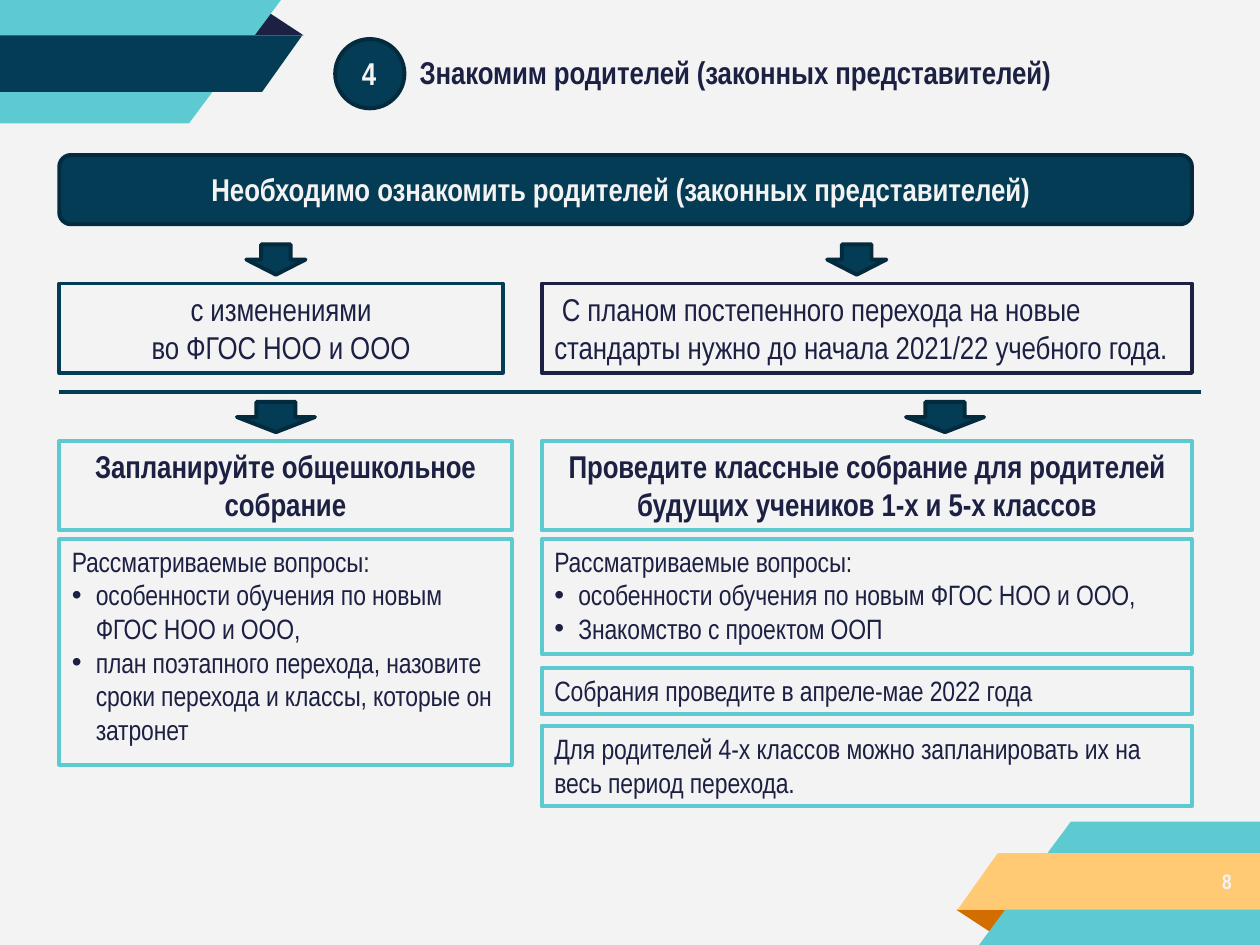
from lxml.etree import SubElement
from pptx import Presentation
from pptx.dml.color import RGBColor
from pptx.enum.shapes import MSO_CONNECTOR, MSO_SHAPE as SHAPE
from pptx.enum.text import MSO_ANCHOR as ANCHOR, MSO_AUTO_SIZE, PP_ALIGN as ALIGN
from pptx.oxml.ns import qn
from pptx.util import Inches, Pt

PAPER = RGBColor(0xF3, 0xF3, 0xF3)
INK = RGBColor(0x1C, 0x20, 0x43)
NAVY = RGBColor(0x04, 0x3C, 0x56)
EDGE = RGBColor(0x03, 0x2A, 0x3D)
TEAL = RGBColor(0x5D, 0xC9, 0xD1)
AMBER = RGBColor(0xFF, 0xCA, 0x73)
RUST = RGBColor(0xD2, 0x6E, 0x00)

W, H = 10, 7.5
LEFT, RIGHT = (0.47, 3.59), (4.3, 5.16)  # x and width of each column
FULL = RIGHT[0] + RIGHT[1] - LEFT[0]
PAD = 0.1
BULLET = 0.19

HEAD = dict(size=Pt(18), bold=True)
LEAD = dict(size=Pt(18), bold=False)
BODY = dict(size=Pt(16), bold=False)


def paint(sp, fill, line=None):
    sp.fill.solid()
    sp.fill.fore_color.rgb = fill
    if line is None:
        sp.line.fill.background()
    else:
        sp.line.color.rgb = line
        sp.line.width = Pt(2.25)


def set_bullet(p, on, first=0):
    pPr = p._p.get_or_add_pPr()
    indent = -BULLET if on else first
    pPr.set("marL", str(Inches(PAD + BULLET if on else PAD)))
    pPr.set("indent", str(Inches(indent)))
    if on:
        SubElement(pPr, qn("a:buFont"), typeface="Arial")
        SubElement(pPr, qn("a:buChar"), char="•")
    else:
        SubElement(pPr, qn("a:buNone"))


def write(sp, lines, font, color=INK, align=ALIGN.LEFT, anchor=ANCHOR.TOP,
          before=3.2, margins=(0, 0.05, 0, 0), bullets=False, first=None):
    """Fill a shape with paragraphs; with bullets, all but the first get one."""
    tf = sp.text_frame
    left, top, right, bottom = map(Inches, margins)
    frame = dict(word_wrap=True, auto_size=MSO_AUTO_SIZE.NONE, vertical_anchor=anchor,
                 margin_left=left, margin_top=top, margin_right=right, margin_bottom=bottom)
    for name, value in frame.items():
        setattr(tf, name, value)
    for i, line in enumerate(lines):
        p = tf.add_paragraph() if i else tf.paragraphs[0]
        p.text = line
        p.alignment = align
        p.space_before = Pt(0 if i else before)
        if first is not None:
            set_bullet(p, bullets and i > 0, 0 if i else first)
        for r in p.runs:
            for name, value in dict(font, name="Arial Narrow").items():
                setattr(r.font, name, value)
            r.font.color.rgb = color
            r._r.get_or_add_rPr().set("spc", "-5")


def place(sp, x, y, w, h):
    for name, value in dict(left=x, top=y, width=w, height=h).items():
        setattr(sp, name, Inches(value))


def add_block(slide, kind, x, y, w, h, fill, line):
    sp = slide.shapes.add_shape(kind, *map(Inches, (x, y, w, h)))
    sp.shadow.inherit = False
    paint(sp, fill, line)
    return sp


def add_card(slide, col, y, h, line, lines, font, **text):
    sp = add_block(slide, SHAPE.RECTANGLE, col[0], y, col[1], h, PAPER, line)
    write(sp, lines, font, **text)


def add_arrow(slide, center, y, w):
    add_block(slide, SHAPE.DOWN_ARROW, center - w / 2, y, w, 0.24, NAVY, EDGE)


def add_ribbon(slide, band, fold, turned=False):
    """Corner ribbon; turned puts it in the opposite corner."""
    parts = [
        (fold, [(2.12, 0.09), (1.98, 0.28), (2.41, 0.28)]),
        (TEAL, [(0, 0), (2.23, 0), (1.5, 0.98), (0, 0.98)]),
        (band, [(0, 0.28), (2.4, 0.28), (2.08, 0.73), (0, 0.73)]),
    ]
    for color, points in parts:
        if turned:
            points = [(W - x, H - y) for x, y in points]
        points = [(Inches(x), Inches(y)) for x, y in points]
        fb = slide.shapes.build_freeform(*points[0])
        fb.add_line_segments(points[1:])
        sp = fb.convert_to_shape()
        sp.shadow.inherit = False
        paint(sp, color)


def add_rule(slide, x1, x2, y):
    line = slide.shapes.add_connector(MSO_CONNECTOR.STRAIGHT, *map(Inches, (x1, y, x2, y)))
    line.line.color.rgb = NAVY
    line.line.width = Pt(2.25)
    SubElement(line._element.spPr, qn("a:effectLst"))


def main():
    prs = Presentation()
    prs.slide_width, prs.slide_height = Inches(W), Inches(H)
    slide = prs.slides.add_slide(prs.slide_layouts[3])
    slide.background.fill.solid()
    slide.background.fill.fore_color.rgb = PAPER
    title, left_list, right_list = slide.placeholders

    # Corner ribbons and page number
    add_ribbon(slide, NAVY, INK)
    add_ribbon(slide, AMBER, RUST, turned=True)
    number = slide.shapes.add_textbox(*map(Inches, (9.66, 6.89, 0.25, 0.22)))
    write(number, ["8"], dict(size=Pt(12), bold=True), PAPER, before=0,
          margins=(0.04, 0, 0, 0))

    # Numbered title
    place(title, 3.32, 0.41, 5.09, 0.33)
    write(title, ["Знакомим родителей (законных представителей)"], HEAD,
          before=1, margins=(0.01, 0.01, 0, 0))
    badge = add_block(slide, SHAPE.OVAL, 2.66, 0.31, 0.55, 0.55, NAVY, EDGE)
    centered = dict(align=ALIGN.CENTER, anchor=ANCHOR.MIDDLE, before=0)
    write(badge, ["4"], HEAD, PAPER, margins=(0, 0, 0.01, 0.01), **centered)

    # Banner
    banner = add_block(slide, SHAPE.ROUNDED_RECTANGLE, LEFT[0], 1.23, FULL, 0.55, NAVY, EDGE)
    banner.adjustments[0] = 0.17
    write(banner, ["Необходимо ознакомить родителей (законных представителей)"], HEAD,
          PAPER, margins=(0, 0, 0.08, 0.01), **centered)

    # What parents are told
    add_card(slide, (LEFT[0], 3.52), 2.25, 0.71, NAVY,
             ["с изменениями", "во ФГОС НОО и ООО"], LEAD, align=ALIGN.CENTER)
    add_card(slide, RIGHT, 2.25, 0.71, INK,
             ["С планом постепенного перехода на новые",
              "стандарты нужно до начала 2021/22 учебного года."], LEAD, first=0.06)
    add_rule(slide, LEFT[0], 9.53, 3.11)
    for y, w, centers in [(1.94, 0.47, (2.19, 6.8)), (3.19, 0.62, (2.19, 7.5))]:
        for center in centers:
            add_arrow(slide, center, y, w)

    # Meetings
    for col, text in [(LEFT, "Запланируйте общешкольное собрание"),
                      (RIGHT, "Проведите классные собрание для родителей "
                              "будущих учеников 1-х и 5-х классов")]:
        add_card(slide, col, 3.5, 0.71, TEAL, [text], HEAD, align=ALIGN.CENTER)

    # Questions for each meeting
    questions = [
        (left_list, LEFT, 1.79,
         ["особенности обучения по новым\vФГОС НОО и ООО,",
          "план поэтапного перехода, назовите сроки перехода и классы, которые он затронет"]),
        (right_list, RIGHT, 0.91,
         ["особенности обучения по новым ФГОС НОО и ООО,", "Знакомство с проектом ООП"]),
    ]
    for sp, (x, w), h, items in questions:
        place(sp, x, 4.28, w, h)
        paint(sp, PAPER, TEAL)
        write(sp, ["Рассматриваемые вопросы:"] + items, BODY,
              margins=(0, 0.04, 0, 0), bullets=True, first=0)

    # Dates
    for y, h, text in [(5.3, 0.37, "Собрания проведите в апреле-мае 2022 года"),
                       (5.76, 0.64, "Для родителей 4-х классов можно запланировать их на "
                                    "весь период перехода.")]:
        add_card(slide, RIGHT, y, h, TEAL, [text], BODY, first=0)

    prs.save("out.pptx")


if __name__ == "__main__":
    main()
